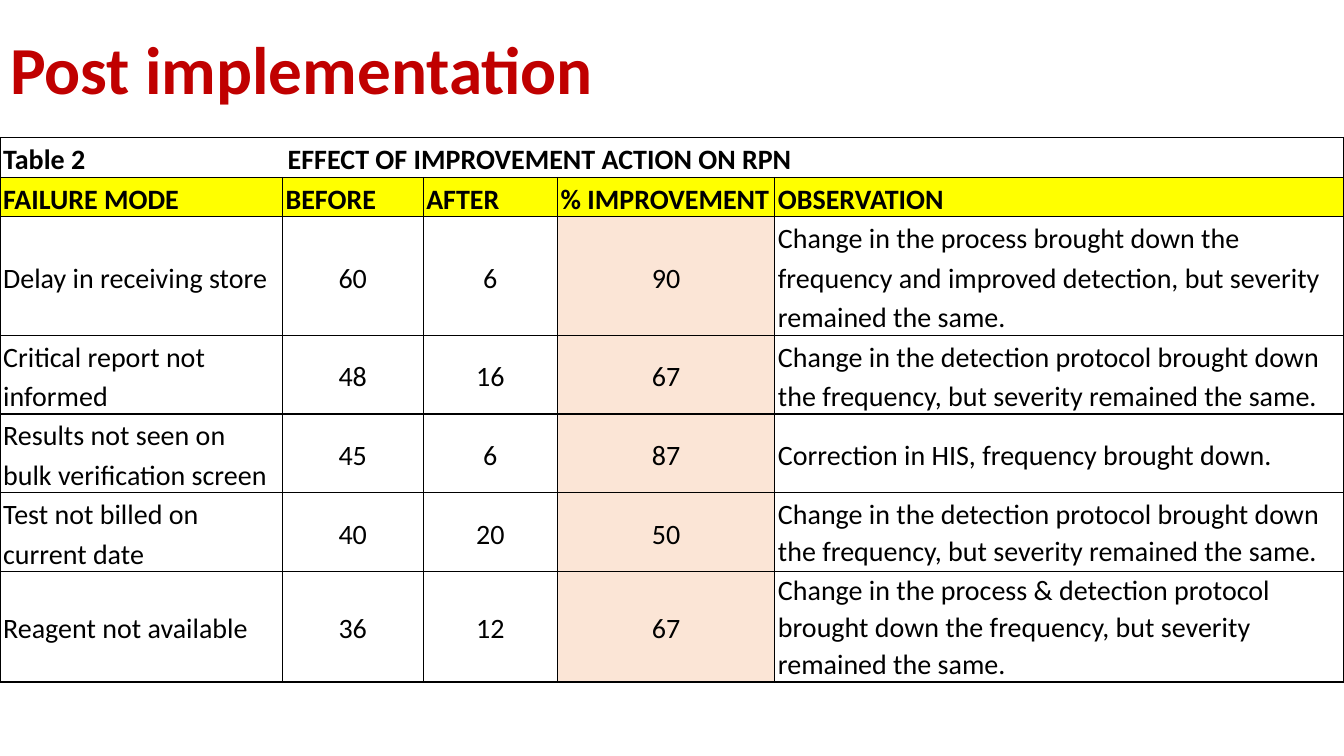
from dataclasses import dataclass

from lxml.etree import SubElement as Sub
from pptx import Presentation
from pptx.dml.color import RGBColor as RGB
from pptx.enum.text import MSO_ANCHOR as Anchor, MSO_AUTO_SIZE as Fit, PP_ALIGN as Align
from pptx.oxml.ns import qn
from pptx.util import Pt

PX = 9525


@dataclass(frozen=True)
class Theme:
    """Colours, font and type sizes of the slide."""
    font: str = "Calibri"
    red: str = "C00000"
    ink: str = "000000"
    gold: str = "FFFF00"
    peach: str = "FBE5D6"
    head: int = 48
    body: int = 20


THEME = Theme()
WIDE, HIGH = 1280, 720
COLS = [269, 134, 128, 207, 542]
ROWS = [38, 37, 112, 75, 75, 75, 105]
GAIN = 3
TAB = 271
TOP = "Table 2\tEFFECT OF IMPROVEMENT ACTION ON RPN"
HEADS = ["FAILURE MODE", "BEFORE", "AFTER", "% IMPROVEMENT", "OBSERVATION"]
DATA = [
    ["Delay in receiving store", "60", "6", "90",
     "Change in the process brought down the frequency and improved detection, "
     "but severity remained the same."],
    ["Critical report not informed", "48", "16", "67",
     "Change in the detection protocol brought down the frequency, "
     "but severity remained the same."],
    ["Results not seen on bulk verification screen", "45", "6", "87",
     "Correction in HIS, frequency brought down."],
    ["Test not billed on current date", "40", "20", "50",
     "Change in the detection protocol brought down the frequency, "
     "but severity remained the same."],
    ["Reagent not available", "36", "12", "67",
     "Change in the process & detection protocol brought down the frequency, "
     "but severity remained the same."],
]


def style(para, size, color, bold, lead, align=Align.LEFT):
    """Set the font, leading and alignment of a paragraph."""
    para.alignment, para.line_spacing = align, lead
    font = para.font
    font.name, font.size, font.bold = THEME.font, Pt(size), bold
    font.color.rgb = RGB.from_string(color)


def add_title(slide, text):
    """Fill and place the title placeholder."""
    box = slide.shapes.title
    box.left, box.top, box.width, box.height = 0, 30 * PX, 1104 * PX, 139 * PX
    frame = box.text_frame
    frame.text = text
    frame.auto_size, frame.vertical_anchor = Fit.NONE, Anchor.TOP
    style(frame.paragraphs[0], THEME.head, THEME.red, True, 0.9)


def add_tab(para, pos):
    """Give a paragraph one left tab stop."""
    tabs = Sub(para._p.get_or_add_pPr(), qn("a:tabLst"))
    Sub(tabs, qn("a:tab"), pos=str(pos * PX), algn="l")


def frame_cell(cell, fill):
    """Draw the borders, margins and fill of a cell."""
    props = cell._tc.get_or_add_tcPr()
    for side in "LRTB":
        line = Sub(props, qn(f"a:ln{side}"), w=str(Pt(1)))
        Sub(Sub(line, qn("a:solidFill")), qn("a:srgbClr"), val=THEME.ink)
    cell.margin_left = cell.margin_right = 3 * PX
    cell.margin_top = cell.margin_bottom = 0
    if fill:
        cell.fill.solid()
        cell.fill.fore_color.rgb = RGB.from_string(fill)
    else:
        cell.fill.background()


def write_cell(cell, text, bold, align=Align.LEFT, lead=1.15):
    """Write the text of a cell, heads at the bottom."""
    cell.text = text
    cell.vertical_anchor = Anchor.BOTTOM if bold else Anchor.MIDDLE
    para = cell.text_frame.paragraphs[0]
    if "\t" in text:
        add_tab(para, TAB)
    style(para, THEME.body, THEME.ink, bold, lead, align)


def add_grid(slide):
    """Build the table of failure modes."""
    shape = slide.shapes.add_table(
        len(ROWS), len(COLS), 0, 131 * PX, WIDE * PX, sum(ROWS) * PX)
    table = shape.table
    table.first_row = table.horz_banding = False
    for col, width in zip(table.columns, COLS):
        col.width = width * PX
    for row, height in zip(table.rows, ROWS):
        row.height = height * PX
    last = len(COLS) - 1
    table.cell(0, 0).merge(table.cell(0, last))
    for y, texts in enumerate([[TOP] + [""] * last, HEADS, *DATA]):
        for x, text in enumerate(texts):
            cell, body = table.cell(y, x), y > 1
            fill = THEME.gold if y == 1 else THEME.peach if body and x == GAIN else None
            frame_cell(cell, fill)
            if text:
                align = Align.CENTER if body and 0 < x < last else Align.LEFT
                lead = 1.07 if y > 4 and x == last else 1.15
                write_cell(cell, text, not body, align, lead)


def main():
    """Build and save the slide."""
    deck = Presentation()
    deck.slide_width, deck.slide_height = WIDE * PX, HIGH * PX
    slide = deck.slides.add_slide(deck.slide_layouts[5])
    add_title(slide, "Post implementation")
    add_grid(slide)
    deck.save("out.pptx")


if __name__ == "__main__":
    main()
